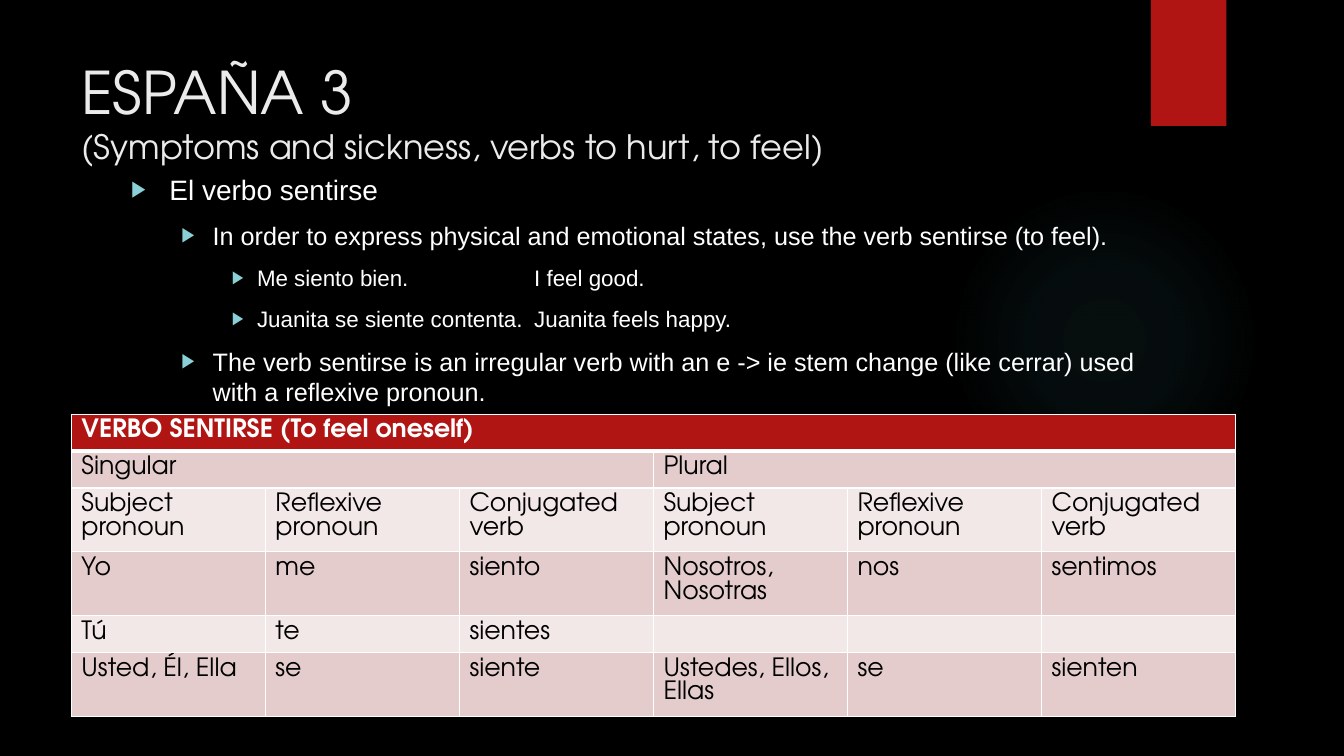
import dataclasses

import pptx
import pptx.dml.color
import pptx.enum.shapes
import pptx.enum.text
import pptx.oxml
import pptx.oxml.ns
import pptx.util

GRID_UNIT = pptx.util.Inches(1) // 12
GRID_COLUMNS, GRID_ROWS = 160, 90
TOP = pptx.enum.text.MSO_ANCHOR.TOP
LEFT = pptx.enum.text.PP_ALIGN.LEFT
NO_FIT = pptx.enum.text.MSO_AUTO_SIZE.NONE


@dataclasses.dataclass(frozen=True)
class Theme:
    background: str = "000000"
    flag: str = "B01513"
    glow: str = "50B9C1"
    bullet: str = "8AD0D6"
    title: str = "EBEBEB"
    light: str = "FFFFFF"
    dark: str = "000000"
    bands: tuple = ("E4CCCC", "F2E8E7")
    display_font: str = "TeX Gyre Adventor"
    body_font: str = "Arial"
    title_size: int = 42
    subtitle_size: int = 24
    level_sizes: tuple = (20, 18, 16)
    level_indents: tuple = ((0.38, 0.38), (0.81, 0.31), (1.25, 0.25))
    translation_tab: float = 4
    table_size: int = 18


def rgb(code):
    return pptx.dml.color.RGBColor.from_string(code)


def apply(target, **values):
    for attribute, value in values.items():
        setattr(target, attribute, value)


def add_xml(parent, body):
    """Append one drawing element written without its namespace declaration."""
    tag, rest = body[1:].split(" ", 1)
    parent.append(pptx.oxml.parse_xml(f"<{tag} {pptx.oxml.ns.nsdecls('a')} {rest}"))


def solid(code):
    return f'<a:solidFill><a:srgbClr val="{code}"/></a:solidFill>'


class SlideBuilder:
    def __init__(self, presentation, theme):
        self.theme = theme
        self.slide = presentation.slides.add_slide(presentation.slide_layouts[1])
        fill = self.slide.background.fill
        fill.solid()
        fill.fore_color.rgb = rgb(theme.background)

    def box(self, *cells):
        return [round(cell * GRID_UNIT) for cell in cells]

    def place(self, placeholder, cells):
        apply(placeholder, **dict(zip(("left", "top", "width", "height"), self.box(*cells))))
        frame = placeholder.text_frame
        apply(frame, word_wrap=True, vertical_anchor=TOP, auto_size=NO_FIT)
        return frame

    def style(self, font, size, color, name, bold=False):
        apply(font, size=pptx.util.Pt(size), name=name, bold=bold)
        font.color.rgb = rgb(color)

    def backdrop(self, kind, cells, color):
        """Add a plain shape behind the title and the list."""
        shape = self.slide.shapes.add_shape(kind, *self.box(*cells))
        shape.shadow.inherit = False
        shape.line.fill.background()
        shape.fill.solid()
        shape.fill.fore_color.rgb = rgb(color)
        self.slide.shapes.title.element.addprevious(shape.element)
        return shape

    def glow(self, cells, stops):
        """Add a round glow; stops pair a position with an opacity, in percent."""
        shape = self.backdrop(pptx.enum.shapes.MSO_SHAPE.OVAL, cells, self.theme.glow)
        gradient_stops = "".join(
            f'<a:gs pos="{position * 1000}"><a:srgbClr val="{self.theme.glow}">'
            f'<a:alpha val="{opacity * 1000}"/></a:srgbClr></a:gs>'
            for position, opacity in stops
        )
        properties = shape.element.spPr
        add_xml(
            properties,
            f'<a:gradFill rotWithShape="1"><a:gsLst>{gradient_stops}</a:gsLst>'
            '<a:path path="circle"><a:fillToRect l="50000" t="50000" r="50000" b="50000"/>'
            "</a:path></a:gradFill>",
        )
        plain_fill = properties.find(pptx.oxml.ns.qn("a:solidFill"))
        properties.replace(plain_fill, properties[-1])

    def title(self, cells, heading, subtitle):
        theme = self.theme
        paragraph = self.place(self.slide.shapes.title, cells).paragraphs[0]
        paragraph.alignment = LEFT
        for text, size in ((heading, theme.title_size), (subtitle, theme.subtitle_size)):
            if paragraph.runs:
                paragraph.add_line_break()
            run = paragraph.add_run()
            run.text = text
            self.style(run.font, size, theme.title, theme.display_font)

    def bullets(self, cells, points):
        theme = self.theme
        frame = self.place(self.slide.placeholders[1], cells)
        for index, (level, text) in enumerate(points):
            paragraph = frame.add_paragraph() if index else frame.paragraphs[0]
            apply(paragraph, level=level, space_before=pptx.util.Pt(10 if index else 0))
            margin, hanging = map(pptx.util.Inches, theme.level_indents[level])
            properties = paragraph._p.get_or_add_pPr()
            properties.set("marL", str(margin))
            properties.set("indent", str(-hanging))
            add_xml(properties, f'<a:buClr ><a:srgbClr val="{theme.bullet}"/></a:buClr>')
            add_xml(properties, '<a:buSzPct val="80000"/>')
            add_xml(properties, f'<a:buFont typeface="{theme.body_font}"/>')
            add_xml(properties, '<a:buChar char="▶"/>')
            if "\t" in text:
                stop = pptx.util.Inches(theme.translation_tab)
                add_xml(properties, f'<a:tabLst ><a:tab pos="{stop}" algn="l"/></a:tabLst>')
            run = paragraph.add_run()
            run.text = text
            self.style(run.font, theme.level_sizes[level], theme.light, theme.body_font)

    def table(self, cells, rows, row_heights, merges):
        theme = self.theme
        table = self.slide.shapes.add_table(len(rows), len(rows[0]), *self.box(*cells)).table
        for row_index, (texts, height) in enumerate(zip(rows, row_heights)):
            table.rows[row_index].height = self.box(height)[0]
            is_header = row_index == 0
            for column, text in enumerate(texts):
                cell = table.cell(row_index, column)
                paragraph = cell.text_frame.paragraphs[0]
                ink = theme.light if is_header else theme.dark
                self.style(paragraph.font, theme.table_size, ink, theme.display_font, is_header)
                if text:
                    run = paragraph.add_run()
                    run.text = text
                    self.style(run.font, theme.table_size, ink, theme.display_font, is_header)
                self.borders(cell, top=3 if row_index == 1 else 1, bottom=3 if is_header else 1)
                cell.fill.solid()
                cell.fill.fore_color.rgb = rgb(
                    theme.flag if is_header else theme.bands[(row_index - 1) % 2]
                )
        for row_index, first, last in merges:
            table.cell(row_index, first).merge(table.cell(row_index, last))

    def borders(self, cell, top, bottom):
        properties = cell._tc.get_or_add_tcPr()
        for side, width in (("L", 1), ("R", 1), ("T", top), ("B", bottom)):
            add_xml(
                properties,
                f'<a:ln{side} w="{pptx.util.Pt(width)}">{solid(self.theme.light)}</a:ln{side}>',
            )


def main():
    presentation = pptx.Presentation()
    apply(
        presentation,
        slide_width=GRID_COLUMNS * GRID_UNIT,
        slide_height=GRID_ROWS * GRID_UNIT,
    )
    theme = Theme()
    lesson = SlideBuilder(presentation, theme)
    lesson.glow((113, 22, 37, 37), ((0, 7), (36, 6), (69, 0)))
    lesson.backdrop(pptx.enum.shapes.MSO_SHAPE.RECTANGLE, (137, 0, 9, 15), theme.flag)
    lesson.title(
        (8.5, 6, 123.5, 18.4), "ESPAÑA 3", "(Symptoms and sickness, verbs to hurt, to feel)"
    )
    lesson.bullets((14.4, 19.9, 126.7, 55.1), [
        (0, "El verbo sentirse"),
        (1, "In order to express physical and emotional states, use the verb sentirse (to feel)."),
        (2, "Me siento bien.\tI feel good."),
        (2, "Juanita se siente contenta.\tJuanita feels happy."),
        (1, "The verb sentirse is an irregular verb with an e -> ie stem change "
            "(like cerrar) used with a reflexive pronoun."),
    ])
    pronoun_headings = ["Subject pronoun", "Reflexive pronoun", "Conjugated verb"]
    conjugation = [
        ["VERBO SENTIRSE (To feel oneself)", "", "", "", "", ""],
        ["Singular", "", "", "Plural", "", ""],
        pronoun_headings * 2,
        ["Yo", "me", "siento", "Nosotros, Nosotras", "nos", "sentimos"],
        ["Tú", "te", "sientes", "", "", ""],
        ["Usted, Él, Ella", "se", "siente", "Ustedes, Ellos, Ellas", "se", "sienten"],
    ]
    lesson.table(
        (8.5, 49.3, 138.6, 36), conjugation, (4.4, 4.4, 7.6, 7.6, 4.4, 7.6),
        merges=[(0, 0, 5), (1, 0, 2), (1, 3, 5)],
    )
    presentation.save("out.pptx")


if __name__ == "__main__":
    main()
